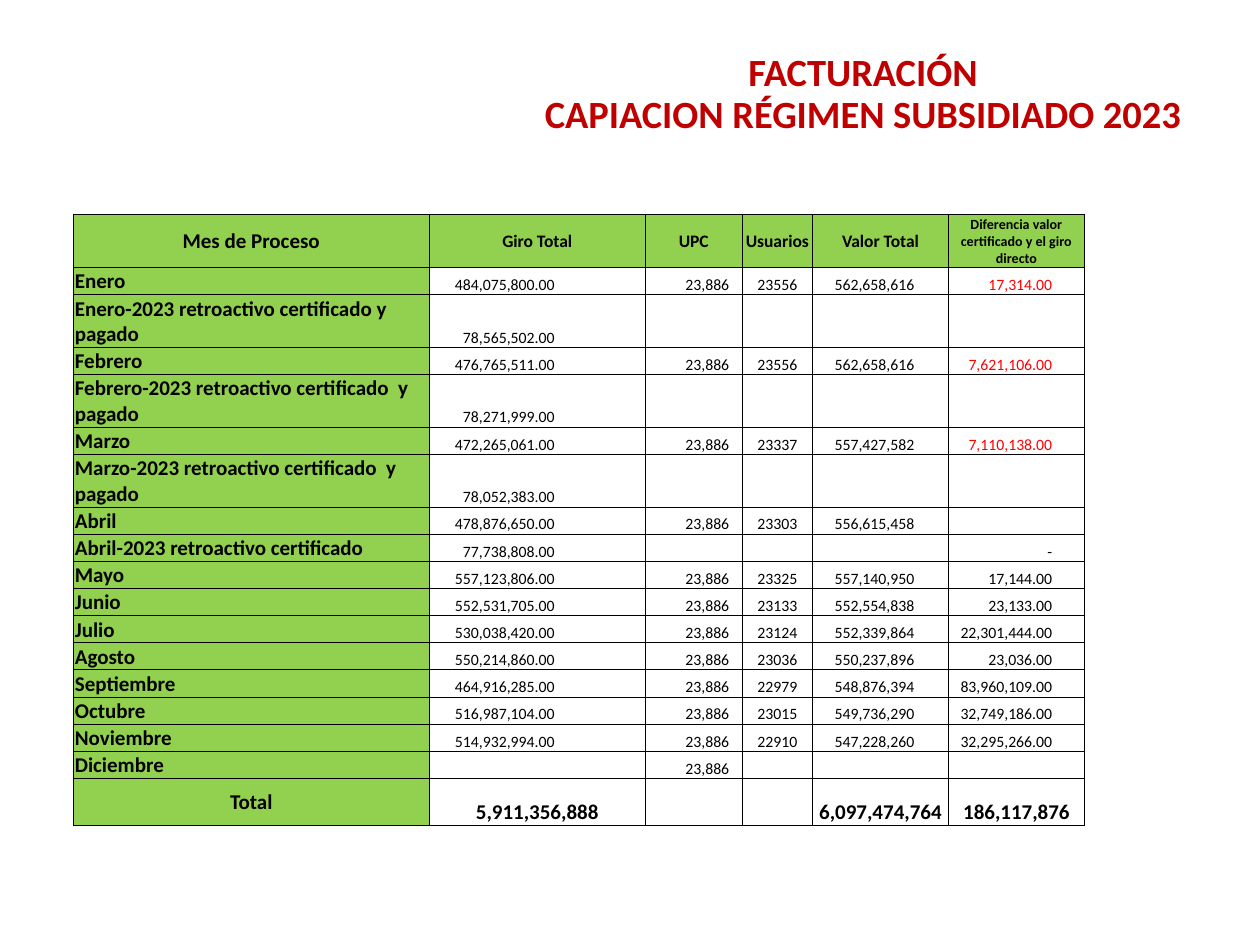
"""Build the 2023 subsidised-scheme billing slide."""
from typing import NamedTuple

from lxml.etree import SubElement
from pptx import Presentation
from pptx.dml.color import RGBColor
from pptx.enum.text import MSO_ANCHOR, MSO_AUTO_SIZE, PP_ALIGN
from pptx.oxml.ns import qn
from pptx.util import Cm, Pt

BLACK, RED, GREEN, TITLE_RED = "000000", "FF0000", "92D050", "C00000"
TALL_ROW, SHORT_ROW = 0.94, 0.48
CELL_MARGIN = 0.03


class Column(NamedTuple):
    heading: str
    width: float
    heading_size: float
    align: PP_ALIGN
    right_margin: float = CELL_MARGIN


class Month(NamedTuple):
    label: str
    transfer: str = ""
    unit: str = ""
    users: str = ""
    value: str = ""
    difference: str = ""
    difference_color: str = BLACK


class CellStyle(NamedTuple):
    size: float
    bold: bool
    align: PP_ALIGN
    anchor: MSO_ANCHOR
    color: str = BLACK
    fill: str = ""
    right_margin: float = CELL_MARGIN


COLUMNS = [
    Column("Mes de Proceso", 7.17, 12, PP_ALIGN.LEFT),
    Column("Giro Total", 4.36, 10, PP_ALIGN.RIGHT, 1.83),
    Column("UPC", 1.95, 10, PP_ALIGN.RIGHT, 0.26),
    Column("Usuarios", 1.42, 10, PP_ALIGN.CENTER),
    Column("Valor Total", 2.74, 10, PP_ALIGN.RIGHT, 0.69),
    Column("Diferencia valor certificado y el giro directo", 2.74, 8, PP_ALIGN.RIGHT, 0.65),
]
UNIT = "23,886"
MONTHS = [
    Month("Enero", "484,075,800.00", UNIT, "23556", "562,658,616", "17,314.00", RED),
    Month("Enero-2023 retroactivo certificado y pagado", "78,565,502.00"),
    Month("Febrero", "476,765,511.00", UNIT, "23556", "562,658,616", "7,621,106.00", RED),
    Month("Febrero-2023 retroactivo certificado  y pagado", "78,271,999.00"),
    Month("Marzo", "472,265,061.00", UNIT, "23337", "557,427,582", "7,110,138.00", RED),
    Month("Marzo-2023 retroactivo certificado  y pagado", "78,052,383.00"),
    Month("Abril", "478,876,650.00", UNIT, "23303", "556,615,458"),
    Month("Abril-2023 retroactivo certificado", "77,738,808.00", difference="-"),
    Month("Mayo", "557,123,806.00", UNIT, "23325", "557,140,950", "17,144.00"),
    Month("Junio", "552,531,705.00", UNIT, "23133", "552,554,838", "23,133.00"),
    Month("Julio", "530,038,420.00", UNIT, "23124", "552,339,864", "22,301,444.00"),
    Month("Agosto", "550,214,860.00", UNIT, "23036", "550,237,896", "23,036.00"),
    Month("Septiembre", "464,916,285.00", UNIT, "22979", "548,876,394", "83,960,109.00"),
    Month("Octubre", "516,987,104.00", UNIT, "23015", "549,736,290", "32,749,186.00"),
    Month("Noviembre", "514,932,994.00", UNIT, "22910", "547,228,260", "32,295,266.00"),
    Month("Diciembre", unit=UNIT),
]
TOTALS = ["Total", "5,911,356,888", "", "", "6,097,474,764", "186,117,876"]


def rgb(color: str) -> RGBColor:
    return RGBColor.from_string(color)


def set_attributes(target, values: dict) -> None:
    for name, value in values.items():
        setattr(target, name, value)


def format_font(font, size: float, bold: bool, color: str) -> None:
    set_attributes(font, {"name": "Calibri", "size": Pt(size), "bold": bold})
    font.color.rgb = rgb(color)


def add_borders(cell) -> None:
    properties = cell._tc.get_or_add_tcPr()
    for side in ("a:lnL", "a:lnR", "a:lnT", "a:lnB"):
        line = SubElement(properties, qn(side), w=str(Pt(0.5)))
        fill = SubElement(line, qn("a:solidFill"))
        SubElement(fill, qn("a:srgbClr"), val=BLACK)


def write_cell(cell, text: str, style: CellStyle) -> None:
    set_attributes(cell, {
        "margin_left": Cm(CELL_MARGIN),
        "margin_right": Cm(style.right_margin),
        "margin_top": Cm(CELL_MARGIN),
        "margin_bottom": 0,
        "vertical_anchor": style.anchor,
    })
    add_borders(cell)
    if style.fill:
        cell.fill.solid()
        cell.fill.fore_color.rgb = rgb(style.fill)
    else:
        cell.fill.background()
    para = cell.text_frame.paragraphs[0]
    para.alignment = style.align
    if text:
        span = para.add_run()
        span.text = text
        format_font(span.font, style.size, style.bold, style.color)
    else:
        SubElement(para._p, qn("a:endParaRPr"), sz=str(int(style.size * 100)))


def add_title(page) -> None:
    box = page.shapes.title
    set_attributes(box, {"left": Cm(10.69), "top": 0, "width": Cm(13.59), "height": Cm(3.84)})
    frame = box.text_frame
    set_attributes(frame, {
        "text": "FACTURACIÓN \vCAPIACION RÉGIMEN SUBSIDIADO 2023 ",
        "word_wrap": True,
        "auto_size": MSO_AUTO_SIZE.NONE,
        "vertical_anchor": MSO_ANCHOR.MIDDLE,
    })
    para = frame.paragraphs[0]
    set_attributes(para, {"alignment": PP_ALIGN.CENTER, "line_spacing": 0.9})
    for span in para.runs:
        format_font(span.font, 22, True, TITLE_RED)


def add_billing_table(page) -> None:
    heights = [TALL_ROW]
    heights += [TALL_ROW if "pagado" in month.label else SHORT_ROW for month in MONTHS]
    heights.append(TALL_ROW)
    width = sum(column.width for column in COLUMNS)
    table = page.shapes.add_table(
        len(heights), len(COLUMNS), Cm(1.48), Cm(4.32), Cm(width), Cm(sum(heights))
    ).table
    set_attributes(table, {"first_row": False, "horz_banding": False})
    for row, height in zip(table.rows, heights):
        row.height = Cm(height)

    for index, column in enumerate(COLUMNS):
        table.columns[index].width = Cm(column.width)
        is_label = index == 0
        label_fill = GREEN if is_label else ""
        anchor = MSO_ANCHOR.MIDDLE if is_label else MSO_ANCHOR.BOTTOM
        heading = CellStyle(
            column.heading_size, True, PP_ALIGN.CENTER, MSO_ANCHOR.MIDDLE, fill=GREEN
        )
        write_cell(table.cell(0, index), column.heading, heading)
        for number, month in enumerate(MONTHS, start=1):
            color = month.difference_color if index == len(COLUMNS) - 1 else BLACK
            body = CellStyle(
                12 if is_label else 9, is_label, column.align, anchor,
                color, label_fill, column.right_margin,
            )
            write_cell(table.cell(number, index), month[index], body)
        total = CellStyle(12, True, PP_ALIGN.CENTER, anchor, fill=label_fill)
        write_cell(table.cell(len(heights) - 1, index), TOTALS[index], total)


def main() -> None:
    deck = Presentation()
    set_attributes(deck, {"slide_width": Cm(25.4), "slide_height": Cm(19.05)})
    page = deck.slides.add_slide(deck.slide_layouts[5])
    add_title(page)
    add_billing_table(page)
    deck.save("out.pptx")


if __name__ == "__main__":
    main()
